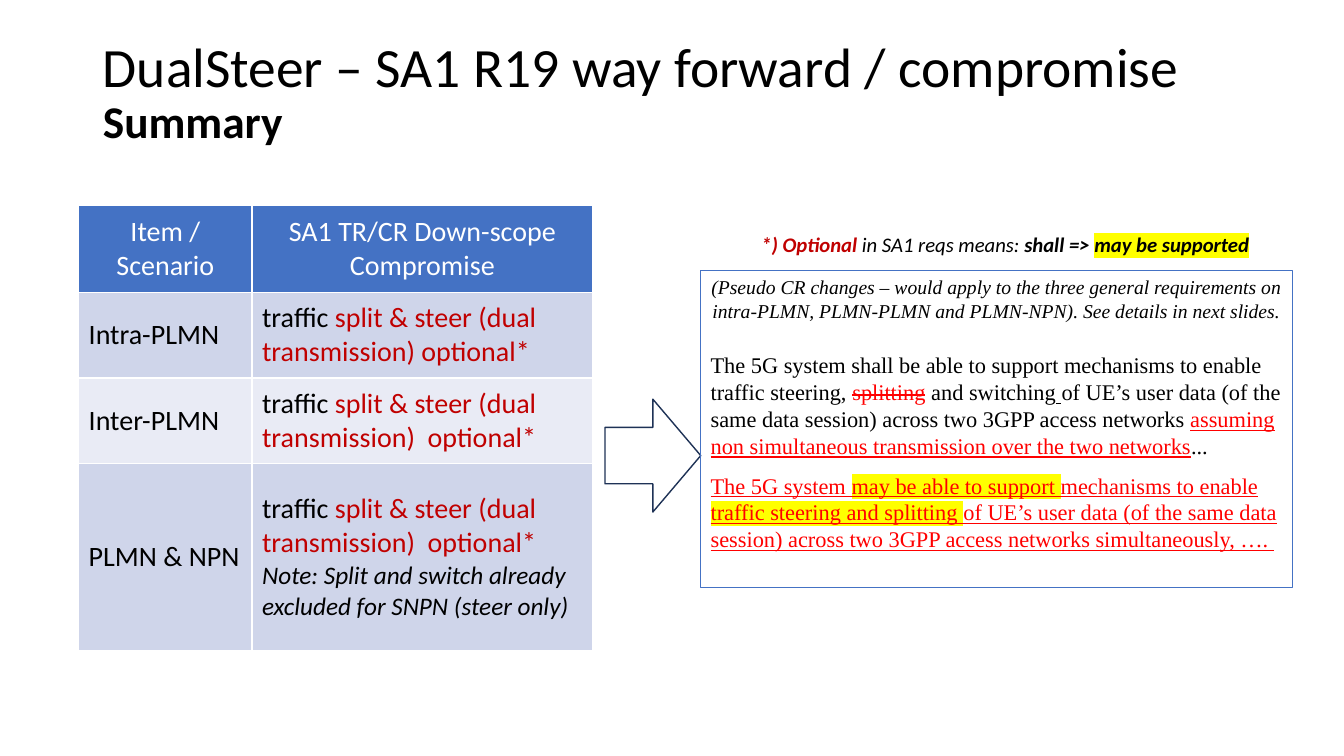
"""Build the DualSteer way-forward summary slide."""
from lxml.etree import SubElement
from pptx import Presentation
from pptx.dml.color import RGBColor
from pptx.enum.shapes import MSO_SHAPE as Shape
from pptx.enum.text import MSO_ANCHOR as Anchor, MSO_AUTO_SIZE as AutoSize, PP_ALIGN as Align
from pptx.oxml.ns import qn
from pptx.util import Inches, Pt

BLACK, WHITE, RED, DARK_RED = "000000", "FFFFFF", "FF0000", "C00000"
BLUE, NAVY, YELLOW = "4472C4", "1E3256", "FFFF00"
BANDS = ["CFD5EA", "E9EBF5"]
SANS, SERIF = "Calibri", "Times New Roman"

INSERTED = {"color": RED, "underline": True}
MARKED = {**INSERTED, "highlight": YELLOW}

TITLE = [("DualSteer – SA1 R19 way forward / compromise\n", {}),
         ("Summary", {"size": 32.4, "bold": True})]
FOOTNOTE = [
    ("*) Optional", {"color": DARK_RED, "bold": True}),
    (" in SA1 reqs means: ", {}),
    ("shall => ", {"bold": True}),
    ("may be supported", {"bold": True, "highlight": YELLOW}),
]
HEADERS = ["Item / Scenario", "SA1 TR/CR Down-scope Compromise"]
SCENARIOS = [
    ("Intra-PLMN", "split & steer (dual transmission) optional*", None),
    ("Inter-PLMN", "split & steer (dual transmission)  optional*", None),
    ("PLMN & NPN", "split & steer (dual transmission)  optional*",
     "Note: Split and switch already excluded for SNPN (steer only)"),
]
COLUMN_WIDTHS = [1.72, 3.38]
ROW_HEIGHTS = [0.86, 0.85, 0.85, 1.85]
CR_INTRO = [("(Pseudo CR changes – would apply to the three general requirements on\n"
             "intra-PLMN, PLMN-PLMN and PLMN-NPN). See details in next slides.", {})]
CR_SHALL = [
    ("The 5G system shall be able to support mechanisms to enable traffic steering, ", {}),
    ("splitting", {"color": RED, "strike": True}),
    (" and switching", {}),
    (" ", {"underline": True}),
    ("of UE’s user data (of the same data session) across two 3GPP access networks ", {}),
    ("assuming non simultaneous transmission over the two networks", INSERTED),
    ("...", {}),
]
CR_MAY = [
    ("The 5G system ", INSERTED),
    ("may be able to support ", MARKED),
    ("mechanisms to enable ", INSERTED),
    ("traffic steering and splitting ", MARKED),
    ("of UE’s user data (of the same data session) across two 3GPP access networks "
     "simultaneously, …. ", INSERTED),
]


def rgb(value):
    return RGBColor.from_string(value)


def style_run(run, color=BLACK, size=None, bold=None, underline=None,
              strike=False, highlight=None):
    run.font.color.rgb = rgb(color)
    run.font.bold = bold
    run.font.underline = underline
    if size:
        run.font.size = Pt(size)
    properties = run.font._element
    if strike:
        properties.set("strike", "sngStrike")
    if highlight:
        marker = SubElement(properties, qn("a:highlight"))
        SubElement(marker, qn("a:srgbClr")).set("val", highlight)


def write(paragraph, pieces, size, font=SANS, italic=False, align=Align.LEFT,
          before=0, after=0, spacing=1.0):
    paragraph.alignment = align
    paragraph.space_before, paragraph.space_after = Pt(before), Pt(after)
    paragraph.line_spacing = spacing
    paragraph.font.name, paragraph.font.size = font, Pt(size)
    paragraph.font.italic = italic
    for text, style in pieces:
        for index, line in enumerate(text.split("\n")):
            if index:
                paragraph.add_line_break()
            if line:
                run = paragraph.add_run()
                run.text = line
                style_run(run, **style)


def place(shape, left, top, width, height):
    shape.left, shape.top = Inches(left), Inches(top)
    shape.width, shape.height = Inches(width), Inches(height)


def add_outline(shapes, kind, box, color, weight):
    shape = shapes.add_shape(kind, *map(Inches, box))
    shape.shadow.inherit = False
    shape.fill.background()
    shape.line.color.rgb = rgb(color)
    shape.line.width = Pt(weight)
    return shape


def add_scenarios(shapes):
    table = shapes.add_table(len(ROW_HEIGHTS), len(COLUMN_WIDTHS), Inches(0.78), Inches(2.04),
                             Inches(sum(COLUMN_WIDTHS)), Inches(sum(ROW_HEIGHTS))).table
    for column, width in zip(table.columns, COLUMN_WIDTHS):
        column.width = Inches(width)
    for row, height in zip(table.rows, ROW_HEIGHTS):
        row.height = Inches(height)
    for cell in table.iter_cells():
        cell.vertical_anchor = Anchor.MIDDLE
        cell.fill.solid()
    for cell, header in zip(table.rows[0].cells, HEADERS):
        cell.fill.fore_color.rgb = rgb(BLUE)
        write(cell.text_frame.paragraphs[0], [(header, {"color": WHITE, "bold": False})],
              20, align=Align.CENTER)
    for index, (scenario, compromise, note) in enumerate(SCENARIOS):
        name_cell, compromise_cell = table.rows[index + 1].cells
        for cell in (name_cell, compromise_cell):
            cell.fill.fore_color.rgb = rgb(BANDS[index % 2])
        write(name_cell.text_frame.paragraphs[0], [(scenario, {})], 20)
        write(compromise_cell.text_frame.paragraphs[0],
              [("traffic ", {}), (compromise, {"color": DARK_RED})], 20)
        if note:
            write(compromise_cell.text_frame.add_paragraph(), [(note, {})], 18, italic=True)


def main():
    deck = Presentation()
    deck.slide_width, deck.slide_height = Inches(13.33), Inches(7.5)
    slide = deck.slides.add_slide(deck.slide_layouts[1])

    title, footnote = slide.placeholders
    place(title, 0.92, 0.68, 11.5, 0.51)
    place(footnote, 6.95, 2.28, 5.87, 0.48)
    for placeholder, anchor in ((title, Anchor.MIDDLE), (footnote, Anchor.TOP)):
        placeholder.text_frame.auto_size = AutoSize.NONE
        placeholder.text_frame.vertical_anchor = anchor
    write(title.text_frame.paragraphs[0], TITLE, 39.6, spacing=0.9)
    footnote_line = footnote.text_frame.paragraphs[0]
    indent = footnote_line._p.get_or_add_pPr()
    indent.set("marL", str(Inches(0.5)))
    indent.set("indent", "0")
    SubElement(indent, qn("a:buNone"))
    write(footnote_line, FOOTNOTE, 14.8, italic=True, spacing=0.9)

    add_scenarios(slide.shapes)
    add_outline(slide.shapes, Shape.RIGHT_ARROW, (6, 3.96, 0.95, 1.12), NAVY, 1)
    change_box = add_outline(slide.shapes, Shape.RECTANGLE, (6.95, 2.68, 5.87, 3.15), BLUE, 0.75)
    changes = change_box.text_frame
    changes.word_wrap = True
    changes.vertical_anchor = Anchor.TOP
    write(changes.paragraphs[0], CR_INTRO, 14, SERIF, italic=True, align=Align.CENTER, after=9)
    write(changes.add_paragraph(), CR_SHALL, 16, SERIF, before=12, after=9)
    write(changes.add_paragraph(), CR_MAY, 16, SERIF, after=9)

    deck.save("out.pptx")


if __name__ == "__main__":
    main()
